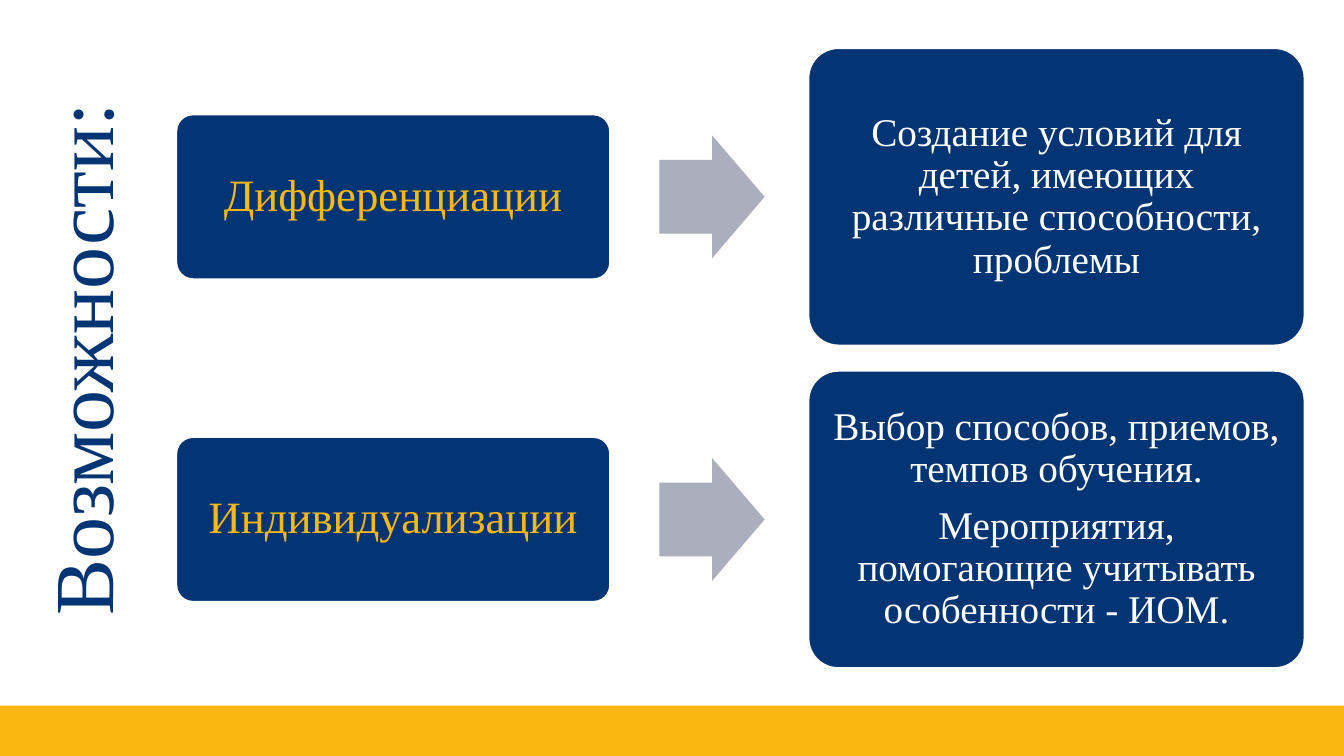
from pptx import Presentation
from pptx import util as u
from pptx.dml.color import RGBColor
from pptx.enum import shapes, text

NAVY, GOLD, GRAY, WHITE = "033473", "FBB812", "ABAEBC", "FFFFFF"
KIND = shapes.MSO_SHAPE


def tint(part, code):
    if hasattr(part, "solid"):
        part.solid()
        part = part.fore_color
    part.rgb = RGBColor.from_string(code)


def draw(kind, box, fill, line=None):
    shape = slide.shapes.add_shape(kind, *[u.Cm(n) for n in box])
    shape.shadow.inherit = False
    tint(shape.fill, fill)
    if line:
        tint(shape.line.fill, line)
        shape.line.width = u.Pt(1)
    else:
        shape.line.fill.background()
    return shape


deck = Presentation()
deck.slide_width, deck.slide_height = u.Cm(33.87), u.Cm(19.05)
slide = deck.slides.add_slide(deck.slide_layouts[5])

draw(KIND.RECTANGLE, (0, 17.78, 33.87, 1.27), GOLD)

title = slide.shapes.title
place = {"left": -5.23, "top": 6.98, "width": 14.5, "height": 3.07}
for name, size in place.items():
    setattr(title, name, u.Cm(size))
title.rotation = 270
frame = title.text_frame
frame.text = "Возможности:"
frame.auto_size = text.MSO_AUTO_SIZE.NONE
frame.vertical_anchor = text.MSO_ANCHOR.MIDDLE
head = frame.paragraphs[0]
head.alignment = text.PP_ALIGN.LEFT
head.font.name, head.font.size = "Times New Roman", u.Pt(60)
tint(head.font.color, NAVY)

rows = [
    ("Дифференциации",
     ["Создание условий для детей, имеющих различные способности, проблемы"]),
    ("Индивидуализации",
     ["Выбор способов, приемов, темпов обучения.",
      "Мероприятия, помогающие учитывать особенности - ИОМ."]),
]
for i, (goal, means) in enumerate(rows):
    mid = 4.96 + 8.13 * i
    arrow = draw(KIND.RIGHT_ARROW, (16.62, mid - 1.55, 2.65, 3.1), GRAY)
    arrow.adjustments[0], arrow.adjustments[1] = 0.6, 0.5

    cards = [
        (4.45, 10.92, 4.14, [goal], GOLD, 32, 0.33),
        (20.38, 12.49, 7.48, means, WHITE, 28, 0.3),
    ]
    for left, wide, high, lines, ink, size, pad in cards:
        box = (left, mid - high / 2, wide, high)
        card = draw(KIND.ROUNDED_RECTANGLE, box, NAVY, WHITE)
        card.adjustments[0] = 0.1
        frame = card.text_frame
        frame.text = "\n".join(lines)
        frame.word_wrap = True
        frame.vertical_anchor = text.MSO_ANCHOR.MIDDLE
        for side in ("left", "top", "right", "bottom"):
            setattr(frame, f"margin_{side}", u.Cm(pad))
        style = {
            "alignment": text.PP_ALIGN.CENTER,
            "line_spacing": 0.9,
            "space_after": u.Pt(round(size * 0.35)),
        }
        for para in frame.paragraphs:
            for name, value in style.items():
                setattr(para, name, value)
            para.font.name, para.font.size = "Times New Roman", u.Pt(size)
            tint(para.font.color, ink)

deck.save("out.pptx")
